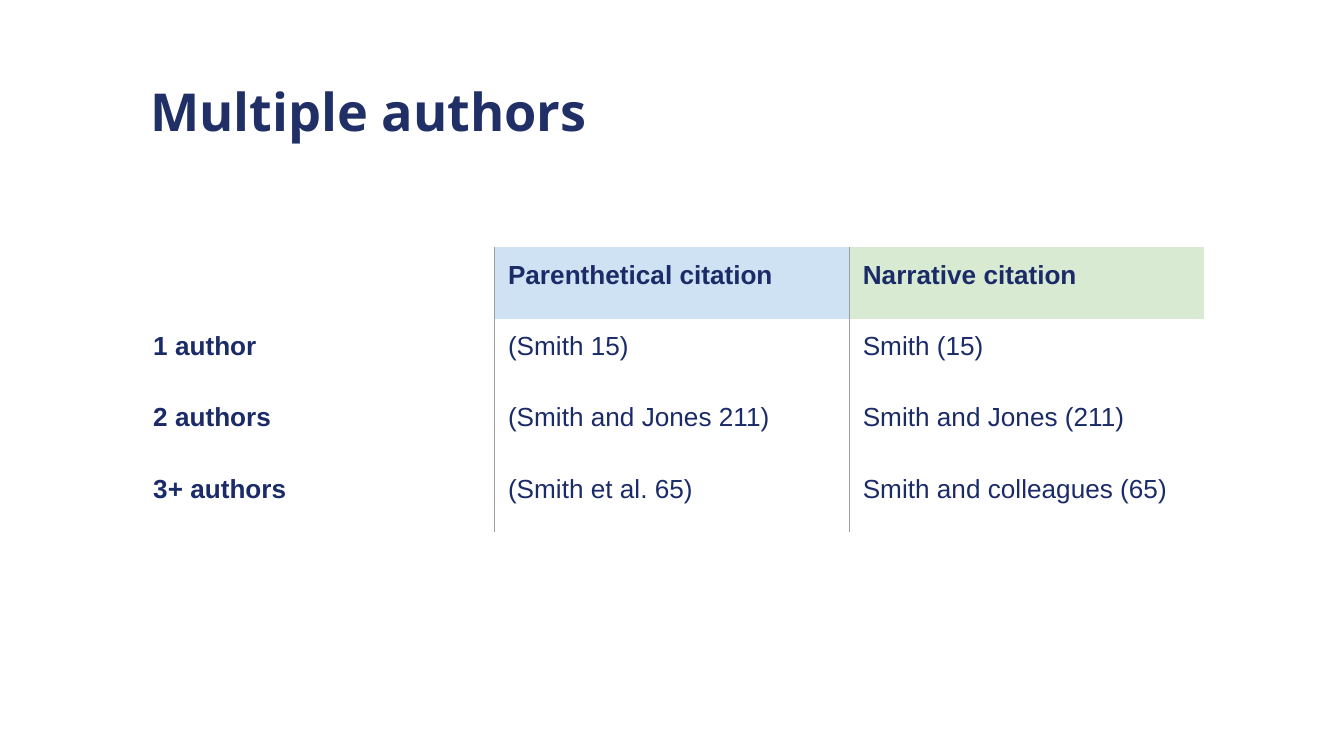
from pptx import Presentation
from pptx.dml.color import RGBColor
from pptx.enum.text import MSO_ANCHOR
from pptx.oxml import parse_xml
from pptx.oxml.ns import nsdecls
from pptx.util import Inches, Pt

BLANK_LAYOUT = 6
TITLE_COLOUR = "202F66"
TEXT_COLOUR = "1B2B68"
RULE_COLOUR = "9E9E9E"
HEADER_FILLS = [None, "CFE2F3", "D9EAD3"]
CITATIONS = [
    ["", "Parenthetical citation", "Narrative citation"],
    ["1 author", "(Smith 15)", "Smith (15)"],
    ["2 authors", "(Smith and Jones 211)", "Smith and Jones (211)"],
    ["3+ authors", "(Smith et al. 65)", "Smith and colleagues (65)"],
]


def colour(hex_string):
    return RGBColor.from_string(hex_string)


class SlideBuilder:
    margin = Inches(0.1)

    def __init__(self, slide):
        self.slide = slide

    def style_text(self, text_frame, font_name, size, hex_string, bold):
        for paragraph in text_frame.paragraphs:
            for item in (paragraph, *paragraph.runs):
                font = item.font
                font.name, font.size, font.bold = font_name, Pt(size), bold
                font.color.rgb = colour(hex_string)

    def set_margins(self, holder):
        holder.margin_left = holder.margin_right = self.margin
        holder.margin_top = holder.margin_bottom = self.margin
        holder.vertical_anchor = MSO_ANCHOR.TOP

    def title(self, text, left, top, width, height):
        box = self.slide.shapes.add_textbox(
            Inches(left), Inches(top), Inches(width), Inches(height))
        frame = box.text_frame
        frame.word_wrap = True
        self.set_margins(frame)
        frame.text = text
        self.style_text(frame, "Open Sans", 28, TITLE_COLOUR, True)

    def borders(self, cell, ruled_sides):
        """Rule the named sides of a cell and clear the others."""
        properties = cell._tc.get_or_add_tcPr()
        for index, side in enumerate("LRTB"):
            paint = "<a:noFill/>"
            if side in ruled_sides:
                paint = f'<a:solidFill><a:srgbClr val="{RULE_COLOUR}"/></a:solidFill>'
            line = f'<a:ln{side} {nsdecls("a")} w="{Pt(0.75)}">{paint}</a:ln{side}>'
            properties.insert(index, parse_xml(line))

    def table(self, rows, left, top, column_width, row_height):
        column_count = len(rows[0])
        table = self.slide.shapes.add_table(
            len(rows), column_count, Inches(left), Inches(top),
            Inches(column_width * column_count), Inches(row_height * len(rows))).table
        table.first_row = table.horz_banding = False
        for row_index, row in enumerate(rows):
            for column_index, text in enumerate(row):
                cell = table.cell(row_index, column_index)
                self.set_margins(cell)
                cell.text_frame.text = text
                is_heading = row_index == 0 or column_index == 0
                self.style_text(cell.text_frame, "Arial", 14, TEXT_COLOUR, is_heading)

                fill = HEADER_FILLS[column_index] if row_index == 0 else None
                if fill:
                    cell.fill.solid()
                    cell.fill.fore_color.rgb = colour(fill)
                else:
                    cell.fill.background()

                # Only the lines between columns are ruled
                left_rule = "L" if column_index > 0 else ""
                right_rule = "R" if column_index < column_count - 1 else ""
                self.borders(cell, left_rule + right_rule)


def main():
    # Widescreen page, 16 to 9
    presentation = Presentation()
    presentation.slide_width = Inches(10)
    presentation.slide_height = Inches(10 * 9 / 16)
    slide = presentation.slides.add_slide(presentation.slide_layouts[BLANK_LAYOUT])
    builder = SlideBuilder(slide)

    # Heading
    builder.title("Multiple authors", 1.02, 0.49, 7.87, 0.63)

    # Citation styles by number of authors
    builder.table(CITATIONS, 1.04, 1.84, column_width=2.64, row_height=0.53)

    presentation.save("out.pptx")


if __name__ == "__main__":
    main()
